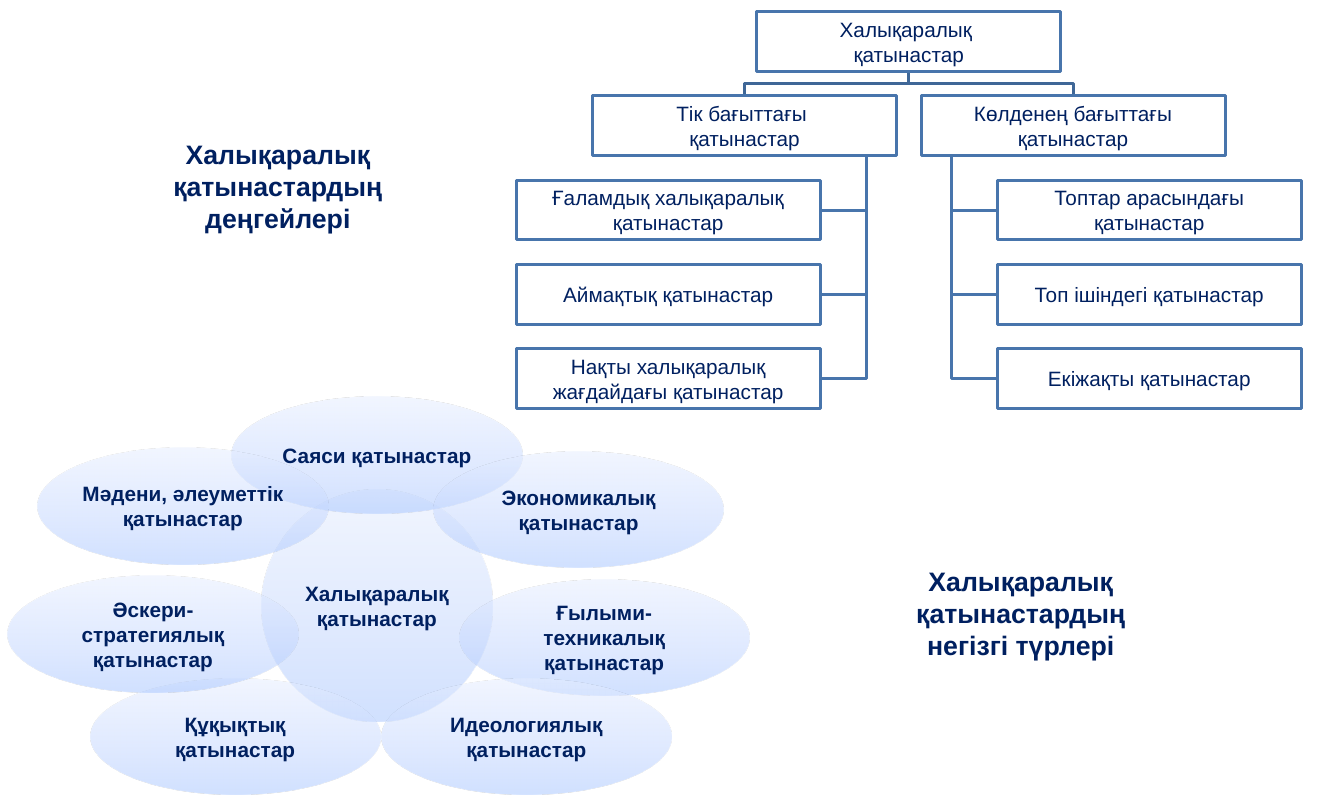
import pptx
import pptx.dml.color
import pptx.enum.shapes
import pptx.enum.text
import pptx.oxml
import pptx.oxml.ns
import pptx.util
from dataclasses import dataclass

Inches = pptx.util.Inches
Pt = pptx.util.Pt
RGB = pptx.dml.color.RGBColor.from_string
SHAPES = pptx.enum.shapes.MSO_SHAPE
ANCHOR = pptx.enum.text.MSO_ANCHOR


@dataclass(frozen=True)
class Theme:
    font: str = "Arial"
    ink: str = "002060"
    paper: str = "FFFFFF"
    edge: str = "4875AC"
    trunk: str = "3F6797"
    petal_stops: tuple = ((0, "A4C4FF"), (35, "BFD4FF"), (100, "E6EEFF"))
    petal_opacity: int = 50
    heading_size: int = 18
    label_size: int = 14
    line_width: int = 2


THEME = Theme()

HEADING_LEVELS = ["Халықаралық қатынастардың", "деңгейлері"]
HEADING_KINDS = ["Халықаралық қатынастардың", "негізгі түрлері"]

ROOT = ["Халықаралық ", "қатынастар"]
VERTICAL = (
    ["Тік бағыттағы ", "қатынастар"],
    [
        "Ғаламдық халықаралық қатынастар",
        "Аймақтық қатынастар",
        "Нақты халықаралық жағдайдағы қатынастар",
    ],
)
HORIZONTAL = (
    ["Көлденең бағыттағы қатынастар"],
    [
        "Топтар арасындағы қатынастар",
        "Топ ішіндегі қатынастар",
        "Екіжақты қатынастар",
    ],
)

CORE = "Халықаралық қатынастар"
PETALS = [
    ("Саяси қатынастар", 0, -1.41),
    ("Экономикалық қатынастар", 1.89, -0.9),
    ("Ғылыми-техникалық қатынастар", 2.13, 0.3),
    ("Идеологиялық қатынастар", 1.4, 1.23),
    ("Құқықтық қатынастар", -1.33, 1.23),
    ("Әскери-стратегиялық қатынастар", -2.1, 0.27),
    ("Мәдени, әлеуметтік қатынастар", -1.82, -0.93),
]


def write(shape, lines, size, bold, inset_x, inset_y, anchor=ANCHOR.MIDDLE):
    frame = shape.text_frame
    frame_format = {
        "word_wrap": True,
        "vertical_anchor": anchor,
        "margin_left": Inches(inset_x),
        "margin_right": Inches(inset_x),
        "margin_top": Inches(inset_y),
        "margin_bottom": Inches(inset_y),
    }
    for name, value in frame_format.items():
        setattr(frame, name, value)
    font_format = {"name": THEME.font, "size": Pt(size), "bold": bold}
    for index, line in enumerate(lines):
        paragraph = frame.add_paragraph() if index else frame.paragraphs[0]
        paragraph.alignment = pptx.enum.text.PP_ALIGN.CENTER
        run = paragraph.add_run()
        run.text = line
        for name, value in font_format.items():
            setattr(run.font, name, value)
        run.font.color.rgb = RGB(THEME.ink)


def place_heading(heading, lines, left, top, width, height):
    box = {"left": left, "top": top, "width": width, "height": height}
    for name, value in box.items():
        setattr(heading, name, Inches(value))
    write(heading, lines, THEME.heading_size, True, 0.1, 0.05, ANCHOR.TOP)


def add_elbow(slide, points, color):
    start, *bends = [(Inches(x), Inches(y)) for x, y in points]
    builder = slide.shapes.build_freeform(*start)
    builder.add_line_segments(bends, close=False)
    elbow = builder.convert_to_shape()
    elbow.shadow.inherit = False
    elbow.fill.background()
    elbow.line.color.rgb = RGB(color)
    elbow.line.width = Pt(THEME.line_width)


def add_card(slide, lines, left, top, width, height):
    card = slide.shapes.add_shape(
        SHAPES.RECTANGLE, *map(Inches, (left, top, width, height))
    )
    card.shadow.inherit = False
    card.fill.solid()
    card.fill.fore_color.rgb = RGB(THEME.paper)
    card.line.color.rgb = RGB(THEME.edge)
    card.line.width = Pt(THEME.line_width)
    write(card, lines, THEME.label_size, False, 0.01, 0.01)


def add_hierarchy(slide, left, top, width, height):
    card_w, card_h = 2.85, 0.56
    pitch = (height - card_h) / 4
    middle = left + width / 2
    root_bottom = top + card_h
    branch_top = top + pitch
    bus = (root_bottom + branch_top) / 2

    for side, (branch_lines, leaves) in ((1, HORIZONTAL), (-1, VERTICAL)):
        branch_x = middle + side * 1.54
        spine_x = branch_x - side * 0.4 * card_w
        leaf_x = middle + side * (width - card_w) / 2
        leaf_edge = leaf_x - side * card_w / 2
        add_elbow(
            slide,
            [(middle, root_bottom), (middle, bus), (branch_x, bus),
             (branch_x, branch_top)],
            THEME.trunk,
        )
        for row, text in enumerate(leaves, start=2):
            leaf_top = top + row * pitch
            leaf_mid = leaf_top + card_h / 2
            add_elbow(
                slide,
                [(spine_x, branch_top + card_h), (spine_x, leaf_mid),
                 (leaf_edge, leaf_mid)],
                THEME.edge,
            )
            add_card(slide, [text], leaf_x - card_w / 2, leaf_top, card_w, card_h)
        add_card(
            slide, branch_lines, branch_x - card_w / 2, branch_top, card_w, card_h
        )
    add_card(slide, ROOT, middle - card_w / 2, top, card_w, card_h)


def add_petal(slide, text, center_x, center_y, width, height):
    petal = slide.shapes.add_shape(
        SHAPES.OVAL,
        *map(Inches, (center_x - width / 2, center_y - height / 2, width, height)),
    )
    petal.shadow.inherit = False
    petal.line.fill.background()
    petal.fill.gradient()
    petal.fill.gradient_angle = 90
    stops = petal._element.spPr.find(".//" + pptx.oxml.ns.qn("a:gsLst"))
    for stop in list(stops):
        stops.remove(stop)
    for position, color in THEME.petal_stops:
        stops.append(pptx.oxml.parse_xml(
            f'<a:gs {pptx.oxml.ns.nsdecls("a")} pos="{position * 1000}">'
            f'<a:srgbClr val="{color}">'
            f'<a:alpha val="{THEME.petal_opacity * 1000}"/></a:srgbClr></a:gs>'
        ))
    write(petal, [text], THEME.label_size, True, 0.02, 0.02)


def add_flower(slide, left, top, width, height):
    center_x = left + width / 2 - 0.01
    center_y = top + height / 2 + 0.08
    add_petal(slide, CORE, center_x, center_y, 2.17, 2.17)
    for text, dx, dy in PETALS:
        add_petal(slide, text, center_x + dx, center_y + dy, 2.72, 1.09)


def main():
    deck = pptx.Presentation()
    deck.slide_width = Inches(12.6)
    deck.slide_height = Inches(7.5)
    slide = deck.slides.add_slide(deck.slide_layouts.get_by_name("Title Only"))
    place_heading(slide.shapes.title, HEADING_LEVELS, 0.79, 1.24, 3.63, 1.01)
    add_flower(slide, 0.07, 3.73, 6.95, 3.73)
    add_hierarchy(slide, 4.84, 0.11, 7.36, 3.72)
    kinds = slide.shapes.add_textbox(0, 0, 0, 0)
    place_heading(kinds, HEADING_KINDS, 8.27, 5.25, 2.6, 1.01)
    deck.save("out.pptx")


if __name__ == "__main__":
    main()
